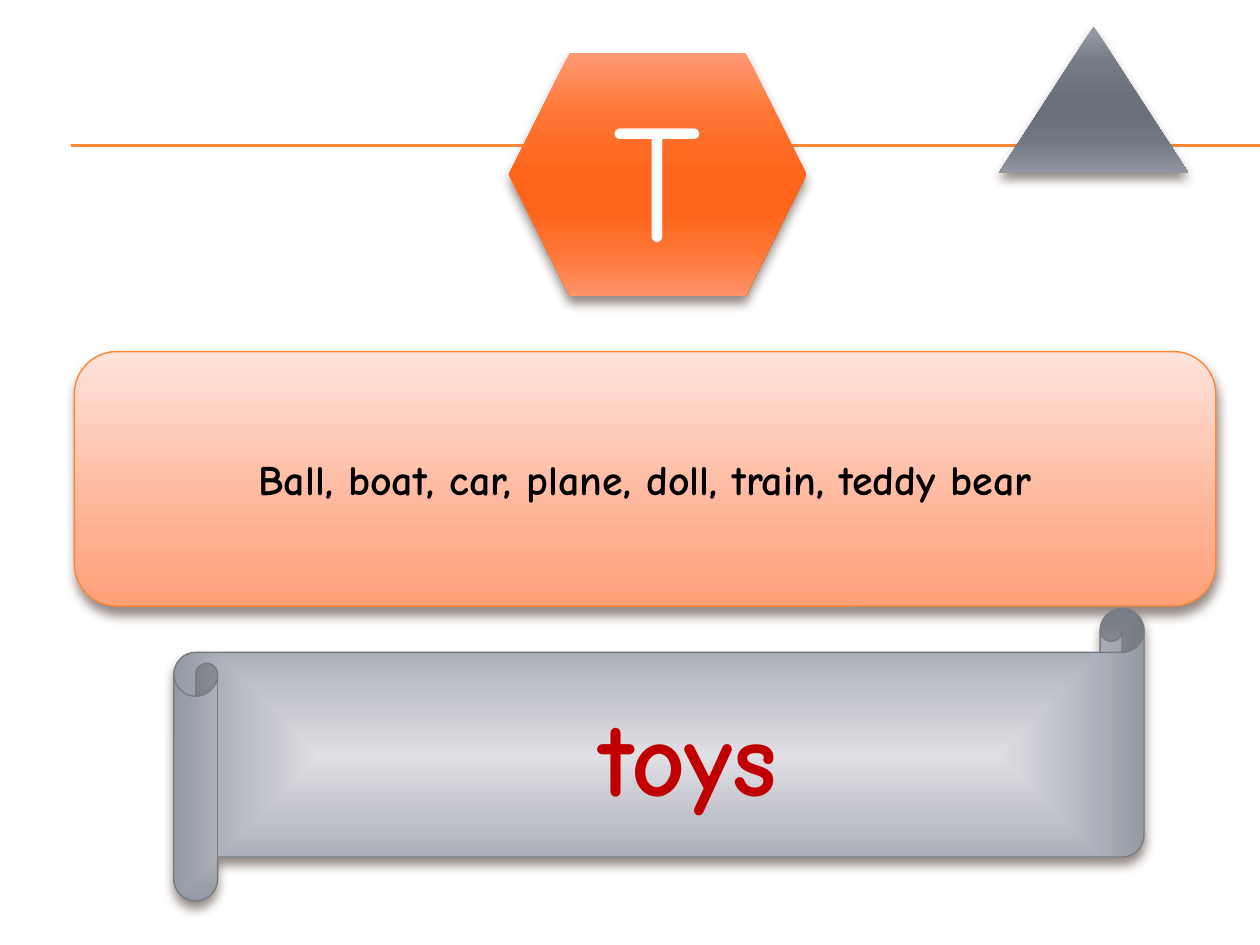
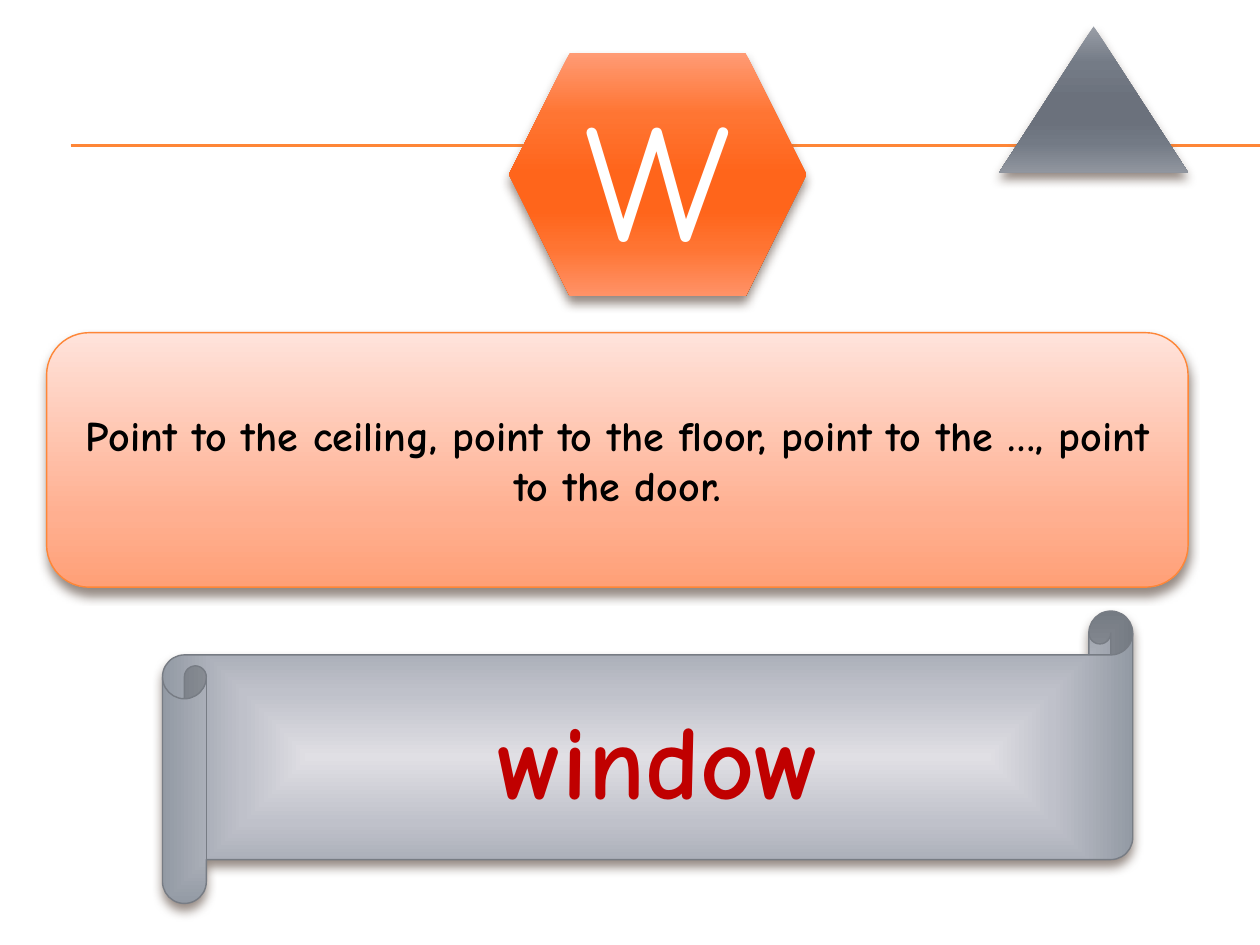
from lxml import etree
from pptx import Presentation
from pptx.dml.color import RGBColor
from pptx.enum.shapes import MSO_CONNECTOR, MSO_SHAPE
from pptx.enum.text import MSO_ANCHOR, PP_ALIGN
from pptx.oxml.ns import qn
from pptx.util import Inches, Pt

FONT = "Comic Neue"
C = {
    "rule": "FE8637", "scroll_edge": "777C84", "shadow": "4E3B30",
    "letter": "FFFFFF", "clue": "000000", "answer": "C00000",
}
# Gradients: (position in percent, colour)
SLATE = [(0, "989DA6"), (25, "747B86"), (50, "6B717C"),
         (65, "6B717C"), (80, "737A85"), (100, "91969F")]
ORANGE = [(0, "FF9B75"), (25, "FF7533"), (50, "FF651B"),
          (65, "FF651B"), (80, "FF7432"), (100, "FF9267")]
PEACH = [(0, "FFE3DB"), (72, "FFAF90"), (100, "FFA077")]
SILVER = [(0, "E0DFE4"), (45, "BFC1CA"), (100, "939AA4")]

CARDS = [
    {"letter": "T", "clue": "Ball, boat, car, plane, doll, train, teddy bear",
     "answer": " toys", "clue_at": (0.59, 2.79), "answer_at": (1.38, 4.83)},
    {"letter": "W",
     "clue": "Point to the ceiling, point to the floor, point to the …, point to the door.",
     "answer": "window", "clue_at": (0.37, 2.64), "answer_at": (1.29, 4.85)},
]


def add_block(s, kind, box, stops, line=None, from_centre=False):
    """Add a shape with a gradient fill, an optional outline and a soft shadow."""
    sp = s.shapes.add_shape(kind, *(Inches(v) for v in box))
    if line:
        sp.line.color.rgb = RGBColor.from_string(C[line])
        sp.line.width = Pt(0.79)
    else:
        sp.line.fill.background()

    grad = etree.Element(qn("a:gradFill"), rotWithShape="1")
    gs_list = etree.SubElement(grad, qn("a:gsLst"))
    for pos, colour in stops:
        gs = etree.SubElement(gs_list, qn("a:gs"), pos=str(pos * 1000))
        etree.SubElement(gs, qn("a:srgbClr"), val=colour)
    if from_centre:
        centre = etree.SubElement(grad, qn("a:path"), path="rect")
        etree.SubElement(centre, qn("a:fillToRect"),
                         **dict.fromkeys("ltrb", "50000"))
    else:
        etree.SubElement(grad, qn("a:lin"), ang="5400000", scaled="0")
    sp.element.spPr.find(qn("a:prstGeom")).addnext(grad)

    sp.shadow.inherit = False
    effects = sp.element.spPr.find(qn("a:effectLst"))
    shadow = etree.SubElement(effects, qn("a:outerShdw"), blurRad=str(Pt(6)),
                              dist=str(Pt(4)), dir="5400000", rotWithShape="0")
    clr = etree.SubElement(shadow, qn("a:srgbClr"), val=C["shadow"])
    etree.SubElement(clr, qn("a:alpha"), val="60000")
    return sp


def write(sp, text, size, colour, bold=True):
    tf = sp.text_frame
    tf.word_wrap = True
    tf.vertical_anchor = MSO_ANCHOR.MIDDLE
    p = tf.paragraphs[0]
    p.text = text
    p.alignment = PP_ALIGN.CENTER
    p.font.name, p.font.size, p.font.bold = FONT, Pt(size), bold
    p.font.color.rgb = RGBColor.from_string(C[colour])
    return p


prs = Presentation()
prs.slide_width, prs.slide_height = Inches(10), Inches(7.5)
blank = prs.slide_layouts[6]

for card in CARDS:
    s = prs.slides.add_slide(blank)

    for y in (1.15, 1.16):
        rule = s.shapes.add_connector(MSO_CONNECTOR.STRAIGHT, Inches(0.56),
                                      Inches(y), prs.slide_width, Inches(y))
        rule.line.color.rgb = RGBColor.from_string(C["rule"])
        rule.line.width = Pt(0.75)
        etree.SubElement(rule.element.spPr, qn("a:effectLst"))

    add_block(s, MSO_SHAPE.ISOSCELES_TRIANGLE, (7.93, 0.21, 1.5, 1.16), SLATE)

    hexagon = add_block(s, MSO_SHAPE.HEXAGON, (4.04, 0.42, 2.36, 1.93), ORANGE)
    write(hexagon, card["letter"], 96, "letter", bold=False)

    clue = add_block(s, MSO_SHAPE.ROUNDED_RECTANGLE,
                     (*card["clue_at"], 9.06, 2.02), PEACH, "rule")
    write(clue, card["clue"], 24, "clue")

    scroll = add_block(s, MSO_SHAPE.HORIZONTAL_SCROLL,
                       (*card["answer_at"], 7.7, 2.32), SILVER,
                       "scroll_edge", from_centre=True)
    scroll.adjustments[0] = 0.15
    write(scroll, card["answer"], 60, "answer").space_before = Pt(12)

prs.save("out.pptx")
